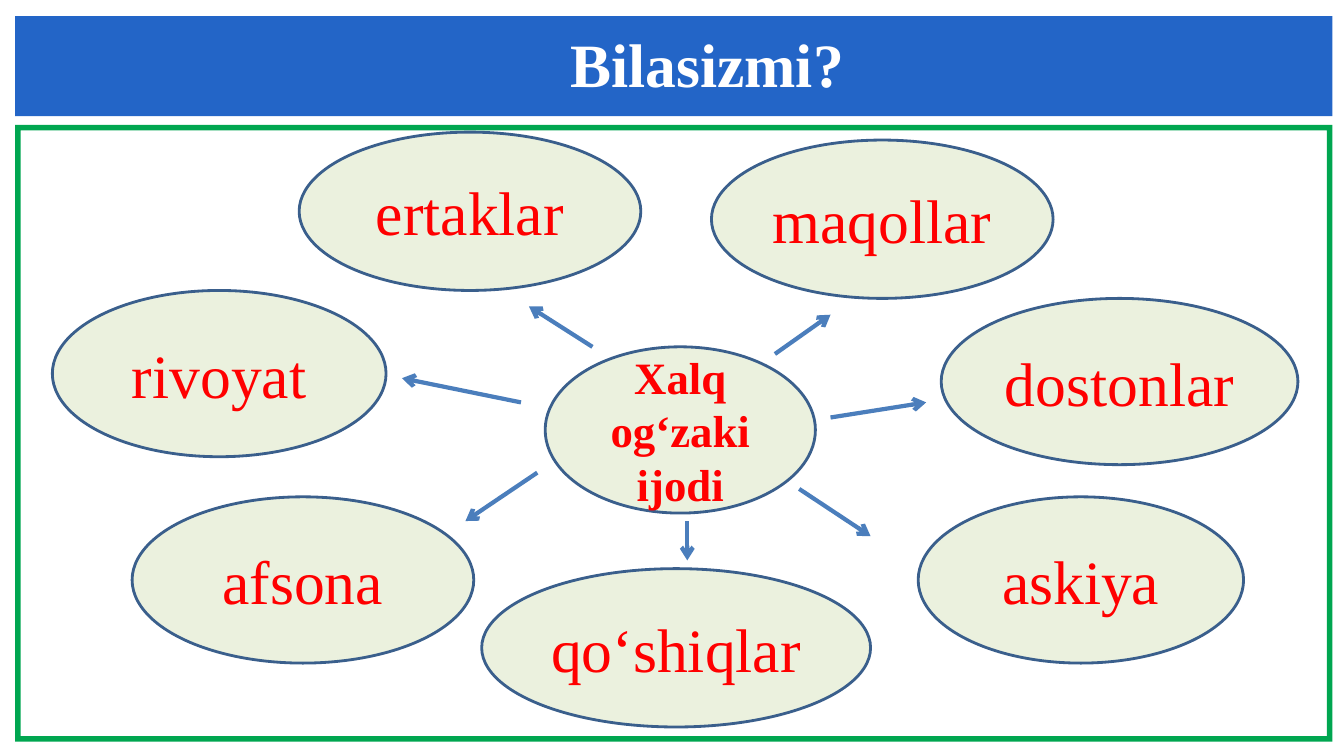
from lxml import etree
from pptx import Presentation
from pptx import util as u
from pptx.dml.color import RGBColor
from pptx.enum import shapes, text
from pptx.oxml import ns

FONT = "Times New Roman"
COLOURS = {
    "banner": "2365C7",
    "title": "FFFFFF",
    "frame": "00A650",
    "bubble": "EBF1DE",
    "outline": "3A5F8C",
    "word": "FF0000",
    "arrow": "4B7EBC",
}
BANNER_BOX = (0.38, 0.41, 33.2, 2.52)
MAP_BOX = (0.38, 3.15, 33.2, 15.54)
FRAME_THICKNESS = 0.14

HUB = ("Xalq og‘zaki ijodi", (13.36, 5.59, 6.81, 4.19))
GENRES = [
    ("ertaklar", (7.16, 0.18, 8.61, 3.99), (14.55, 5.59, 12.95, 4.57)),
    ("maqollar", (17.55, 0.38, 8.61, 3.99), (19.15, 5.77, 20.55, 4.78)),
    ("dostonlar", (23.34, 4.37, 8.99, 4.19), (20.55, 7.37, 22.96, 6.99)),
    ("askiya", (22.76, 9.37, 8.2, 4.19), (19.76, 9.17, 21.56, 10.36)),
    ("qo‘shiqlar", (11.76, 11.18, 9.8, 3.99), (16.94, 9.98, 16.94, 10.97)),
    ("afsona", (2.95, 9.37, 8.61, 4.19), (13.16, 8.76, 11.35, 9.98)),
    ("rivoyat", (0.94, 4.17, 8.41, 4.19), (12.75, 6.99, 9.75, 6.38)),
]


def colour(name):
    """Return the named colour of the palette."""
    return RGBColor.from_string(COLOURS[name])


def style_text(frame, wording, size, colour_name, bold, align):
    """Write one paragraph into a text frame and format it."""
    frame.text = wording
    paragraph = frame.paragraphs[0]
    paragraph.alignment = align
    font = paragraph.runs[0].font
    font.name, font.size, font.bold = FONT, u.Pt(size), bold
    font.color.rgb = colour(colour_name)


def add_filled(slide, preset, box, fill):
    """Add a flat preset shape without outline."""
    shape = slide.shapes.add_shape(preset, *map(u.Cm, box))
    shape.shadow.inherit = False
    shape.fill.solid()
    shape.fill.fore_color.rgb = colour(fill)
    shape.line.fill.background()
    return shape


def add_banner(slide, box):
    """Draw the blue banner and set the title on top of it."""
    left, top, _, _ = box
    banner = add_filled(slide, shapes.MSO_SHAPE.RECTANGLE, box, "banner")
    title = slide.shapes.title
    banner.element.addnext(title.element)
    title.left, title.top = u.Cm(left + 13.74), u.Cm(top + 0.12)
    title.width, title.height = u.Cm(12.6), u.Cm(2.13)
    frame = title.text_frame
    frame.vertical_anchor = text.MSO_ANCHOR.TOP
    frame.auto_size = text.MSO_AUTO_SIZE.NONE
    style_text(frame, "Bilasizmi?", 44, "title", True, text.PP_ALIGN.LEFT)


def add_bubble(slide, box, place, wording, size, bold=False):
    """Draw one labelled ellipse, placed relative to the box."""
    left, top, width, height = place
    bubble = add_filled(slide, shapes.MSO_SHAPE.OVAL,
                        (box[0] + left, box[1] + top, width, height), "bubble")
    bubble.line.color.rgb = colour("outline")
    bubble.line.width = u.Pt(2)
    frame = bubble.text_frame
    frame.word_wrap = True
    frame.margin_left = frame.margin_right = 0
    frame.vertical_anchor = text.MSO_ANCHOR.MIDDLE
    style_text(frame, wording, size, "word", bold, text.PP_ALIGN.CENTER)


def add_arrow(slide, box, ends):
    """Draw an arrow between two points given relative to the box."""
    left, top, _, _ = box
    x1, y1, x2, y2 = ends
    points = (left + x1, top + y1, left + x2, top + y2)
    arrow = slide.shapes.add_connector(shapes.MSO_CONNECTOR.STRAIGHT, *map(u.Cm, points))
    arrow.line.color.rgb = colour("arrow")
    arrow.line.width = u.Pt(3)
    properties = arrow.element.spPr
    etree.SubElement(properties.find(ns.qn("a:ln")), ns.qn("a:tailEnd"), type="arrow")
    etree.SubElement(properties, ns.qn("a:effectLst"))


def add_genre_map(slide, box):
    """Draw the green frame, the hub and the genres it points to."""
    border = add_filled(slide, shapes.MSO_SHAPE.FRAME, box, "frame")
    border.adjustments[0] = FRAME_THICKNESS / box[3]
    for genre, place, ends in GENRES:
        add_bubble(slide, box, place, genre, 44)
        add_arrow(slide, box, ends)
    topic, place = HUB
    add_bubble(slide, box, place, topic, 32, bold=True)


def main():
    """Build the slide and save it."""
    deck = Presentation()
    deck.slide_width, deck.slide_height = u.Cm(33.87), u.Cm(19.05)
    slide = deck.slides.add_slide(deck.slide_layouts.get_by_name("Title Only"))
    add_banner(slide, BANNER_BOX)
    add_genre_map(slide, MAP_BOX)
    deck.save("out.pptx")


if __name__ == "__main__":
    main()
